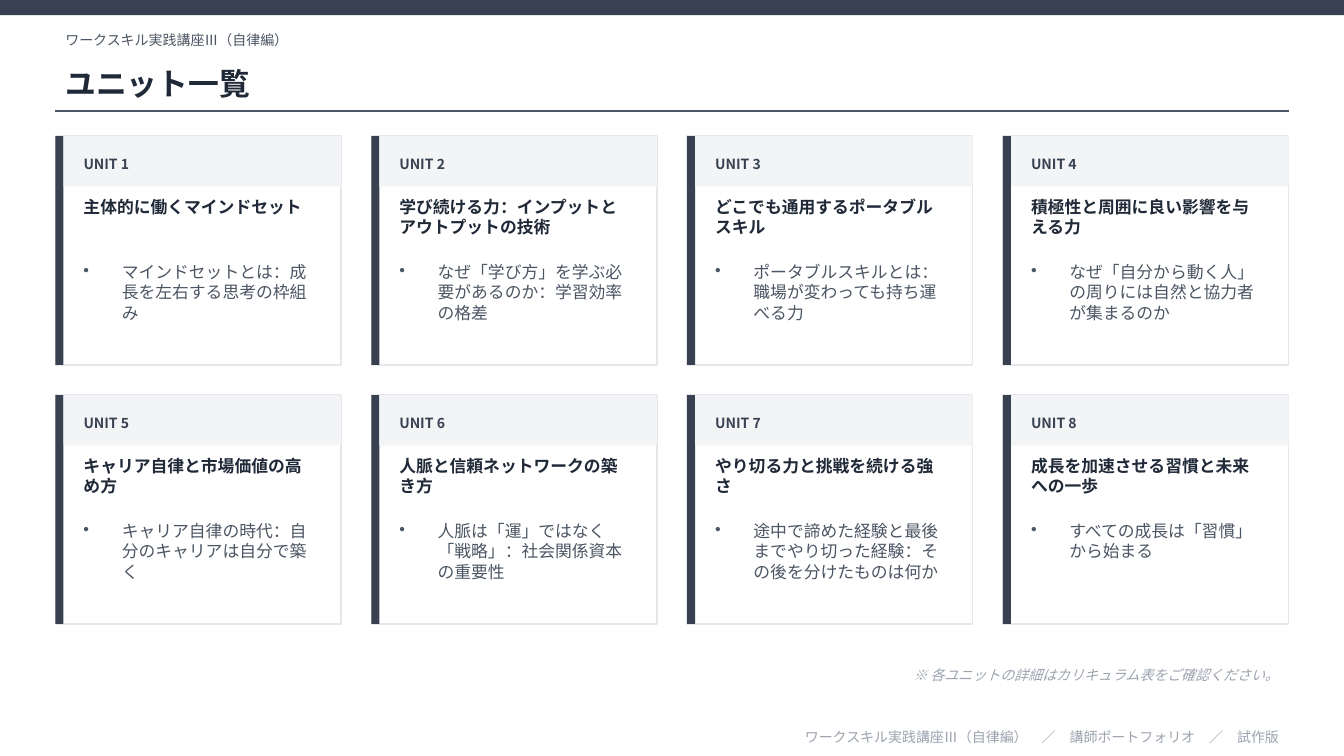
"""Build the unit overview slide of the work skills course."""
import lxml.etree
import pptx
import pptx.dml.color
import pptx.enum.shapes
import pptx.enum.text
import pptx.oxml.ns
import pptx.util

THEME = {
    "font": "Noto Sans CJK JP",
    "navy": "374151", "ink": "1F2937", "body": "4B5563", "muted": "9CA3AF",
    "band": "F3F4F6", "border": "E5E7EB", "paper": "FFFFFF",
    "title": 22, "text": 12, "small": 10,
}
STYLES = {
    "course": {"size": "small", "color": "body"},
    "heading": {"size": "title", "color": "ink", "bold": True},
    "unit": {"size": "small", "color": "navy", "bold": True},
    "unit_title": {"size": "text", "color": "ink", "bold": True},
    "topic": {"size": "text", "color": "body"},
    "remark": {"size": "small", "color": "muted", "italic": True},
    "footer": {"size": "small", "color": "muted"},
}
UNITS = [
    ("主体的に働くマインドセット", "マインドセットとは：成長を左右する思考の枠組み"),
    ("学び続ける力：インプットとアウトプットの技術", "なぜ「学び方」を学ぶ必要があるのか：学習効率の格差"),
    ("どこでも通用するポータブルスキル", "ポータブルスキルとは：職場が変わっても持ち運べる力"),
    ("積極性と周囲に良い影響を与える力", "なぜ「自分から動く人」の周りには自然と協力者が集まるのか"),
    ("キャリア自律と市場価値の高め方", "キャリア自律の時代：自分のキャリアは自分で築く"),
    ("人脈と信頼ネットワークの築き方", "人脈は「運」ではなく「戦略」：社会関係資本の重要性"),
    ("やり切る力と挑戦を続ける強さ", "途中で諦めた経験と最後までやり切った経験：その後を分けたものは何か"),
    ("成長を加速させる習慣と未来への一歩", "すべての成長は「習慣」から始まる"),
]
COURSE = "ワークスキル実践講座Ⅲ（自律編）"
WIDTH, HEIGHT = 13.33, 7.5
MARGIN, GAP, COLUMNS = 0.55, 0.3, 4
CONTENT = WIDTH - 2 * MARGIN
CARD_TOP, CARD_HEIGHT = 1.35, 2.27
CARD_WIDTH = (CONTENT - (COLUMNS - 1) * GAP) / COLUMNS
STRIPE, PAD = 0.08, 0.18
TEXT_WIDTH = CARD_WIDTH - 2 * PAD
RULE_Y = 1.1

MIDDLE = pptx.enum.text.MSO_ANCHOR.MIDDLE
TOP = pptx.enum.text.MSO_ANCHOR.TOP
RIGHT = pptx.enum.text.PP_ALIGN.RIGHT
Inches = pptx.util.Inches
rgb = pptx.dml.color.RGBColor.from_string

deck = pptx.Presentation()
deck.slide_width, deck.slide_height = Inches(WIDTH), Inches(HEIGHT)
slide = deck.slides.add_slide(deck.slide_layouts[6])
slide.background.fill.solid()
slide.background.fill.fore_color.rgb = rgb(THEME["paper"])


def add_block(box, fill, border=None):
    """Draw a filled rectangle, outlined only when a border is named."""
    block = slide.shapes.add_shape(
        pptx.enum.shapes.MSO_SHAPE.RECTANGLE, *map(Inches, box))
    block.shadow.inherit = False
    block.fill.solid()
    block.fill.fore_color.rgb = rgb(THEME[fill])
    if border:
        block.line.color.rgb = rgb(THEME[border])
        block.line.width = pptx.util.Pt(1)
    else:
        block.line.fill.background()


def add_text(box, wording, style, anchor=MIDDLE, align=None):
    """Write one styled paragraph and return it."""
    frame = slide.shapes.add_textbox(*map(Inches, box)).text_frame
    frame.word_wrap = True
    frame.vertical_anchor = anchor
    paragraph = frame.paragraphs[0]
    paragraph.alignment = align
    run = paragraph.add_run()
    run.text = wording
    look = STYLES[style]
    values = {"name": THEME["font"], "size": pptx.util.Pt(THEME[look["size"]]),
              "bold": look.get("bold"), "italic": look.get("italic")}
    run.font.color.rgb = rgb(THEME[look["color"]])
    for attribute, value in values.items():
        setattr(run.font, attribute, value)
    lxml.etree.SubElement(run._r.get_or_add_rPr(), pptx.oxml.ns.qn("a:ea"),
                          typeface=THEME["font"])
    return paragraph


add_block((0, 0, WIDTH, HEIGHT / 50), "navy")
add_text((MARGIN, 0.25, CONTENT, 0.3), COURSE, "course")
add_text((MARGIN, 0.55, CONTENT, 0.55), "ユニット一覧", "heading")

rule = slide.shapes.add_connector(
    pptx.enum.shapes.MSO_CONNECTOR.STRAIGHT,
    *map(Inches, (MARGIN, RULE_Y, MARGIN + CONTENT, RULE_Y)))
rule.line.color.rgb = rgb(THEME["body"])
rule.line.width = pptx.util.Pt(1)
lxml.etree.SubElement(rule._element.spPr, pptx.oxml.ns.qn("a:effectLst"))

for index, (unit_title, topic) in enumerate(UNITS):
    row, column = divmod(index, COLUMNS)
    left = MARGIN + column * (CARD_WIDTH + GAP)
    top = CARD_TOP + row * (CARD_HEIGHT + GAP)
    add_block((left, top, CARD_WIDTH, CARD_HEIGHT), "paper", "border")
    add_block((left, top, STRIPE, CARD_HEIGHT), "navy")
    add_block((left + STRIPE, top, CARD_WIDTH - STRIPE, 0.5), "band")
    inner = left + PAD
    add_text((inner, top + 0.08, 0.95, 0.4), f"UNIT {index + 1}", "unit")
    add_text((inner, top + 0.55, TEXT_WIDTH, 0.6), unit_title, "unit_title", TOP)
    bullet = add_text((inner, top + 1.2, TEXT_WIDTH, 0.97), topic, "topic", TOP)
    bullet.space_after = pptx.util.Pt(3)
    properties = bullet._p.get_or_add_pPr()
    properties.set("marL", str(Inches(0.38)))
    properties.set("indent", str(-Inches(0.38)))
    lxml.etree.SubElement(properties, pptx.oxml.ns.qn("a:buChar"), char="•")

add_text((MARGIN, 6.55, CONTENT, 0.3),
         "※ 各ユニットの詳細はカリキュラム表をご確認ください。", "remark", align=RIGHT)
add_text((MARGIN, 7.2, CONTENT, 0.22),
         "　／　".join((COURSE, "講師ポートフォリオ", "試作版")), "footer", align=RIGHT)

deck.save("out.pptx")
